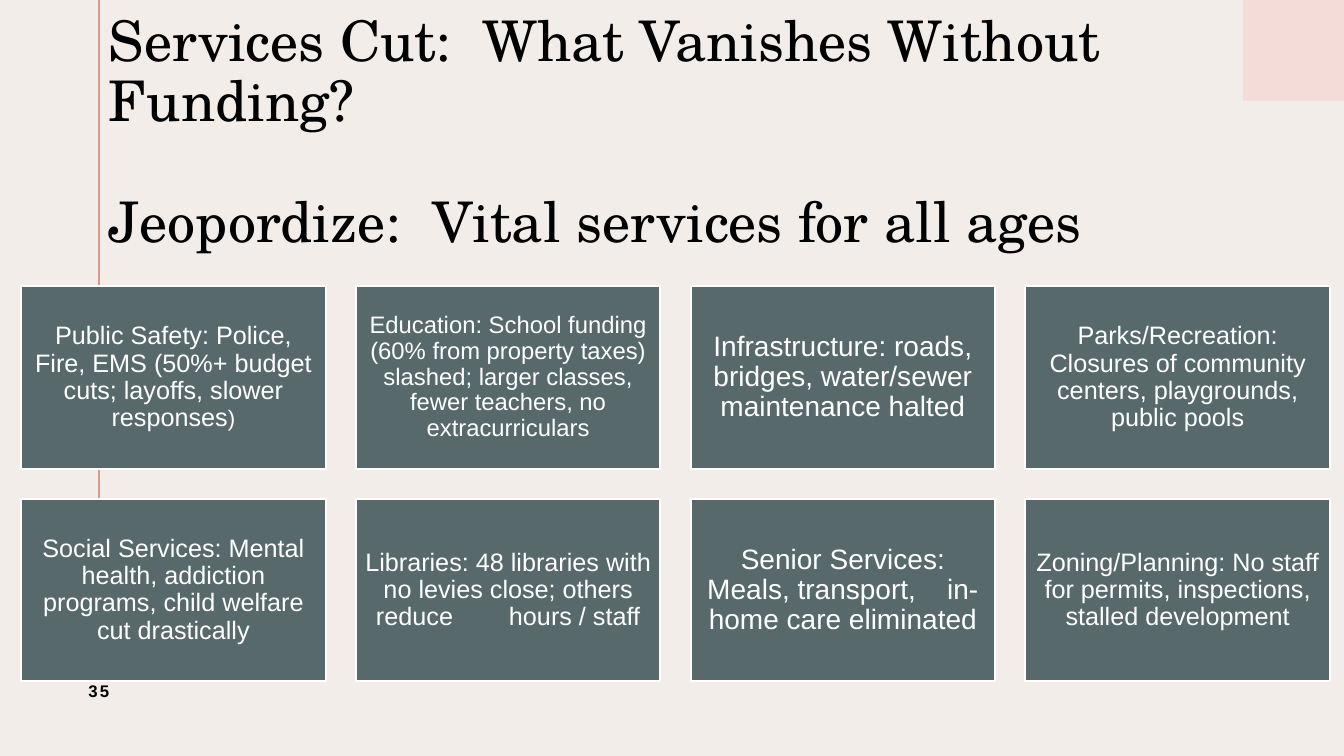
from dataclasses import dataclass

import pptx
import pptx.dml.color
import pptx.enum.shapes
import pptx.enum.text
import pptx.oxml
import pptx.oxml.ns
import pptx.util
from pptx.util import Inches

COLORS = {
    "background": "F3EDEA",
    "corner": "F4DDD8",
    "rule": "DF998B",
    "tile": "58696B",
    "white": "FFFFFF",
    "black": "000000",
}
TITLE_FONT = "TeX Gyre Schola"
BODY_FONT = "Arial"

COLUMNS = 4
GRID_LEFT, GRID_TOP = 0.21, 2.84
TILE_WIDTH, TILE_HEIGHT, GAP = 3.02, 1.81, 0.3


@dataclass
class Service:
    text: str
    size: int = 18
    inset: float = 0.07
    ending: str = ""
    ending_size: int = 16


SERVICES = [
    Service("Public Safety: Police, Fire, EMS (50%+ budget cuts; layoffs, slower responses", ending=")"),
    Service("Education: School funding (60% from property taxes) slashed; larger classes, "
            "fewer teachers, no extracurriculars", size=17),
    Service("Infrastructure: roads, bridges, water/sewer maintenance halted", size=20, inset=0.08),
    Service("Parks/Recreation: Closures of community centers, playgrounds, public pools"),
    Service("Social Services: Mental health, addiction programs, child welfare cut drastically"),
    Service("Libraries: 48 libraries with no levies close; others reduce        hours / staff"),
    Service("Senior Services: Meals, transport,    in-home care eliminated", size=20, inset=0.08),
    Service("Zoning/Planning: No staff for permits, inspections, stalled development"),
]


def rgb(name: str) -> pptx.dml.color.RGBColor:
    return pptx.dml.color.RGBColor.from_string(COLORS[name])


def add_text(paragraph, text: str, *, size: float, font: str = BODY_FONT, color: str = "black",
             bold: bool = False, spacing: float = 0, centered: bool = False,
             line_spacing: float = 1.0, before: float = 0) -> None:
    """Append a formatted run; spacing is between letters, in points."""
    if centered:
        paragraph.alignment = pptx.enum.text.PP_ALIGN.CENTER
    paragraph.line_spacing = line_spacing
    if before:
        paragraph.space_before = pptx.util.Pt(before)
    run = paragraph.add_run()
    run.text = text
    run.font.size = pptx.util.Pt(size)
    run.font.name = font
    run.font.bold = bold
    run.font.color.rgb = rgb(color)
    if spacing:
        run.font._element.set("spc", str(round(spacing * 100)))


def prepare_frame(shape, left: float, top: float, right: float, bottom: float):
    """Set wrapping, middle anchor and insets, and return the text frame."""
    frame = shape.text_frame
    frame.word_wrap = True
    frame.vertical_anchor = pptx.enum.text.MSO_ANCHOR.MIDDLE
    frame.margin_left, frame.margin_top = Inches(left), Inches(top)
    frame.margin_right, frame.margin_bottom = Inches(right), Inches(bottom)
    return frame


def add_rectangle(slide, left: float, top: float, width: float, height: float,
                  fill: str, outline: str = ""):
    rectangle = slide.shapes.add_shape(
        pptx.enum.shapes.MSO_SHAPE.RECTANGLE,
        Inches(left), Inches(top), Inches(width), Inches(height))
    rectangle.shadow.inherit = False
    rectangle.fill.solid()
    rectangle.fill.fore_color.rgb = rgb(fill)
    if outline:
        rectangle.line.color.rgb = rgb(outline)
        rectangle.line.width = pptx.util.Pt(1.5)
    else:
        rectangle.line.fill.background()
    return rectangle


def add_margin_rule(slide) -> None:
    rule = slide.shapes.add_connector(
        pptx.enum.shapes.MSO_CONNECTOR.STRAIGHT,
        Inches(0.98), Inches(0), Inches(0.98), Inches(6.5))
    rule.line.color.rgb = rgb("rule")
    rule.line.width = pptx.util.Pt(1.5)
    properties = rule._element.spPr
    properties.append(pptx.oxml.parse_xml(
        f"<a:effectLst {pptx.oxml.ns.nsdecls('a')}/>"))


def add_title(slide) -> None:
    title = slide.shapes.add_textbox(Inches(1.08), Inches(0.55), Inches(12.11), Inches(1.56))
    frame = prepare_frame(title, 0, 0.05, 0.1, 0.05)
    heading = dict(size=40, font=TITLE_FONT, line_spacing=0.9)
    add_text(frame.paragraphs[0], "Services Cut:  What Vanishes Without Funding?", **heading)
    add_text(frame.add_paragraph(), "Jeopordize:  Vital services for all ages",
             before=43.2, **heading)


def add_page_number(slide) -> None:
    number = slide.shapes.add_textbox(Inches(0.45), Inches(6.5), Inches(1.06), Inches(0.71))
    frame = prepare_frame(number, 0.1, 0.05, 0.1, 0.05)
    add_text(frame.paragraphs[0], "35", size=12, bold=True, spacing=1.5, centered=True)


def add_service(slide, index: int, service: Service) -> None:
    row, column = divmod(index, COLUMNS)
    tile = add_rectangle(
        slide, GRID_LEFT + column * (TILE_WIDTH + GAP), GRID_TOP + row * (TILE_HEIGHT + GAP),
        TILE_WIDTH, TILE_HEIGHT, "tile", "white")
    paragraph = prepare_frame(tile, *[service.inset] * 4).paragraphs[0]
    style = dict(color="white", centered=True, line_spacing=0.9)
    add_text(paragraph, service.text, size=service.size, **style)
    if service.ending:
        add_text(paragraph, service.ending, size=service.ending_size, **style)


def main() -> None:
    deck = pptx.Presentation()
    deck.slide_width, deck.slide_height = Inches(13.33), Inches(7.5)
    slide = deck.slides.add_slide(deck.slide_layouts[6])
    slide.background.fill.solid()
    slide.background.fill.fore_color.rgb = rgb("background")

    add_rectangle(slide, 12.33, 0, 1, 1, "corner")
    add_margin_rule(slide)
    add_title(slide)
    add_page_number(slide)
    for index, service in enumerate(SERVICES):
        add_service(slide, index, service)
    deck.save("out.pptx")


if __name__ == "__main__":
    main()
